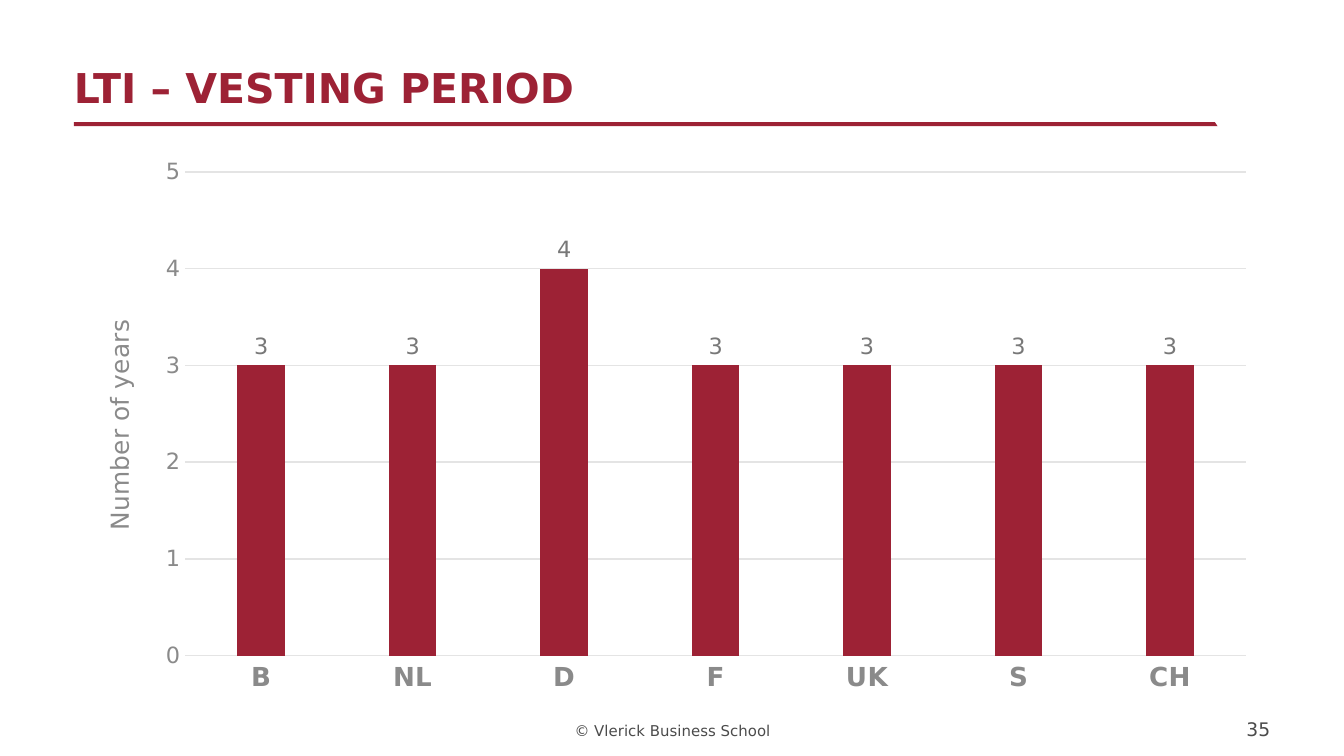
import pptx
import pptx.chart.data
import pptx.dml.color
import pptx.enum.chart
import pptx.enum.text
import pptx.oxml
import pptx.oxml.ns
import pptx.util

Inches = pptx.util.Inches
Pt = pptx.util.Pt
ALIGN = pptx.enum.text.PP_ALIGN
TICK = pptx.enum.chart.XL_TICK_MARK

FONT = "DejaVu Sans"
COLORS = {
    "brand": "9D2235",
    "text": "4B4B4B",
    "axis": "8A8A8A",
    "label": "787878",
    "grid": "E4E4E4",
}


class SlideBuilder:
    """Hold the slide style and draw each kind of element on the current slide."""

    def __init__(self, slide):
        self.slide = slide

    def color(self, name):
        return pptx.dml.color.RGBColor.from_string(COLORS[name])

    def style_font(self, font, size, color, bold=False):
        font.name = FONT
        font.size = Pt(size)
        font.bold = bold
        font.color.rgb = self.color(color)

    def style_line(self, line):
        line.color.rgb = self.color("grid")
        line.width = Pt(0.75)

    def text(self, wording, box, size, color, align=ALIGN.LEFT, bold=False, bottom=0):
        frame = self.slide.shapes.add_textbox(*map(Inches, box)).text_frame
        frame.word_wrap = True
        frame.vertical_anchor = pptx.enum.text.MSO_ANCHOR.BOTTOM
        frame.margin_left = frame.margin_right = frame.margin_top = 0
        frame.margin_bottom = Inches(bottom)
        frame.text = wording
        paragraph = frame.paragraphs[0]
        paragraph.alignment = align
        self.style_font(paragraph.runs[0].font, size, color, bold)

    def outline(self, points, color):
        start, *others = [(Inches(x), Inches(y)) for x, y in points]
        builder = self.slide.shapes.build_freeform(*start)
        builder.add_line_segments(others, close=True)
        rule = builder.convert_to_shape()
        rule.shadow.inherit = False
        rule.fill.solid()
        rule.fill.fore_color.rgb = self.color(color)
        rule.line.fill.background()

    def column_chart(self, box, plot_box, categories, years, axis_title):
        data = pptx.chart.data.CategoryChartData()
        data.categories = categories
        data.add_series("Series 1", years)
        chart = self.slide.shapes.add_chart(
            pptx.enum.chart.XL_CHART_TYPE.COLUMN_CLUSTERED, *map(Inches, box), data
        ).chart
        chart.has_legend = False
        chart.has_title = False
        self.style_font(chart.font, 10, "text")

        plot = chart.plots[0]
        plot.vary_by_categories = False
        plot.gap_width = 219
        plot.overlap = -27
        columns = plot.series[0]
        columns.format.fill.solid()
        columns.format.fill.fore_color.rgb = self.color("brand")
        labels = columns.data_labels
        labels.show_value = True
        labels.position = pptx.enum.chart.XL_LABEL_POSITION.OUTSIDE_END
        self.style_font(labels.font, 12, "label")

        countries, scale = chart.category_axis, chart.value_axis
        for axis in (countries, scale):
            axis.major_tick_mark = axis.minor_tick_mark = TICK.NONE
        self.style_font(countries.tick_labels.font, 14, "axis", bold=True)
        self.style_line(countries.format.line)
        self.style_font(scale.tick_labels.font, 12, "axis")
        scale.format.line.fill.background()
        scale.minimum_scale = 0
        scale.maximum_scale = 5
        scale.major_unit = 1
        scale.has_major_gridlines = True
        self.style_line(scale.major_gridlines.format.line)
        title_frame = scale.axis_title.text_frame
        title_frame.text = axis_title
        self.style_font(title_frame.paragraphs[0].runs[0].font, 13.3, "axis")
        self.place_plot(chart, box, plot_box)

    def place_plot(self, chart, box, plot_box):
        left, top, width, height = box
        plot_left, plot_top, plot_width, plot_height = plot_box
        settings = {
            "layoutTarget": "inner",
            "xMode": "edge",
            "yMode": "edge",
            "x": (plot_left - left) / width,
            "y": (plot_top - top) / height,
            "w": plot_width / width,
            "h": plot_height / height,
        }
        qn = pptx.oxml.ns.qn
        area = chart.element.find(".//" + qn("c:plotArea"))
        for layout in area.findall(qn("c:layout")):
            area.remove(layout)
        tags = "".join(f'<c:{tag} val="{value}"/>' for tag, value in settings.items())
        area.insert(0, pptx.oxml.parse_xml(
            f'<c:layout {pptx.oxml.ns.nsdecls("c")}>'
            f"<c:manualLayout>{tags}</c:manualLayout></c:layout>"
        ))


def main():
    deck = pptx.Presentation()
    deck.slide_width = Inches(10)
    deck.slide_height = Inches(10 * 9 / 16)
    builder = SlideBuilder(deck.slides.add_slide(deck.slide_layouts[6]))

    builder.text("© Vlerick Business School", (3.94, 5.35, 2.13, 0.16), 8, "text",
                 ALIGN.CENTER, bottom=0.01)
    builder.outline([(0.55, 0.91), (9.04, 0.91), (9.06, 0.94), (0.55, 0.94)], "brand")
    builder.text("LTI – VESTING PERIOD", (0.55, 0, 8.27, 0.83), 22, "brand", bold=True)
    builder.column_chart(
        (0.55, 1.1, 8.9, 4.13),
        (1.38, 1.28, 7.89, 3.6),
        ["B", "NL", "D", "F", "UK", "S", "CH"],
        [3, 3, 4, 3, 3, 3, 3],
        "Number of years",
    )
    builder.text("35", (8.9, 5.35, 0.55, 0.16), 10, "text", ALIGN.RIGHT)
    deck.save("out.pptx")


if __name__ == "__main__":
    main()
